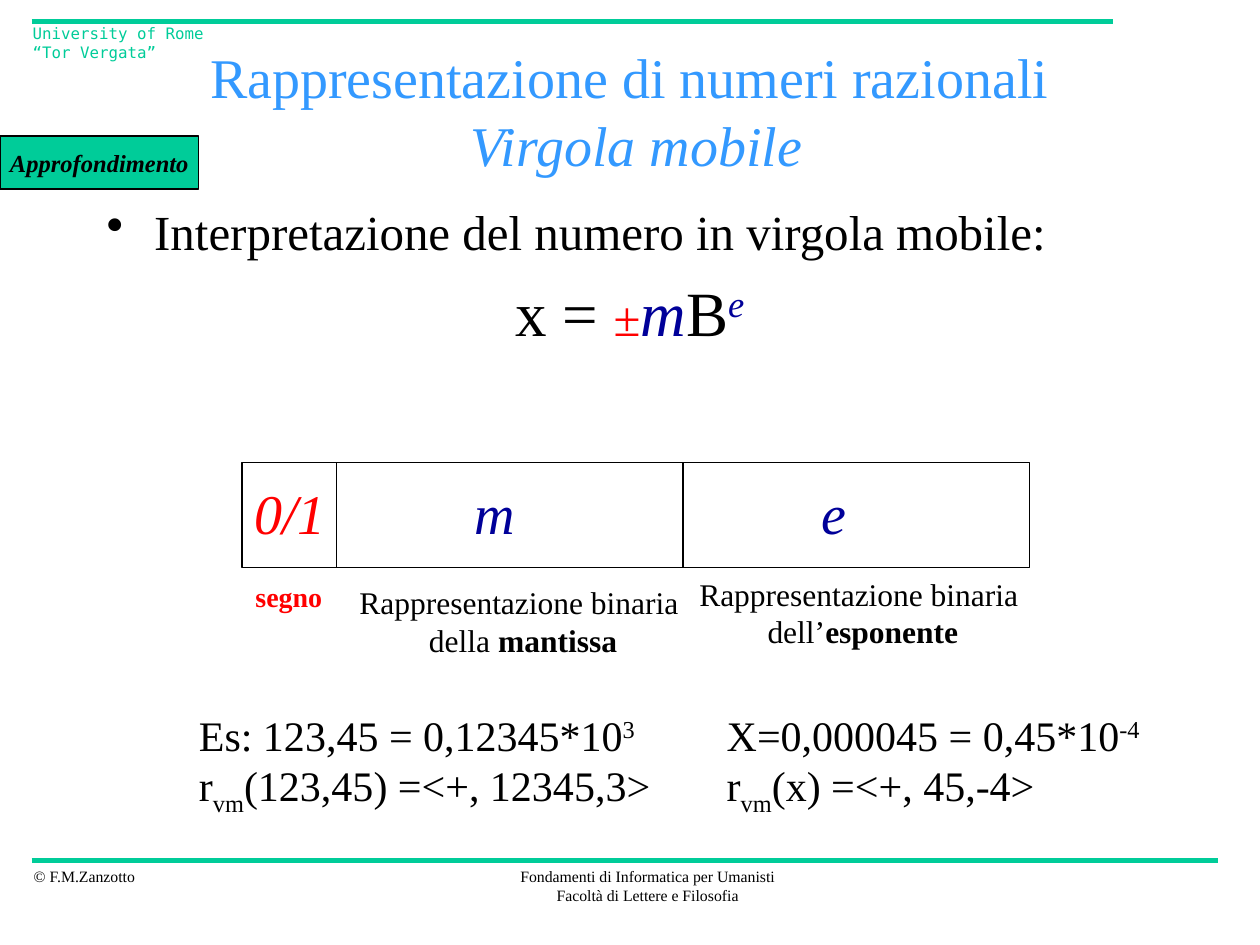
"""Build the slide on floating-point representation of rational numbers."""
from dataclasses import dataclass

from lxml import etree
from pptx import Presentation
from pptx import util as u
from pptx.dml.color import RGBColor
from pptx.enum import shapes, text
from pptx.oxml.ns import qn

HUES = {"green": "00CC99", "sky": "3399FF", "navy": "000099",
        "red": "FF0000", "black": "000000"}
SERIF, MONO = "Times New Roman", "DejaVu Sans Mono"
MID = text.PP_ALIGN.CENTER
NORM = {"size": 18, "hue": "black", "bold": False, "slant": False,
        "font": SERIF, "base": 0}


@dataclass
class Box:
    """Place of an object in centimetres."""
    left: float
    top: float
    width: float
    height: float

    def place(self) -> tuple:
        """Give the four lengths that python-pptx expects."""
        return tuple(u.Cm(n) for n in (self.left, self.top, self.width, self.height))


@dataclass
class Field:
    """One part of the stored number."""
    width: float
    sign: str
    hue: str
    glyph: Box


@dataclass
class Note:
    """Words under a field or in an example."""
    box: Box
    lines: list
    look: dict


def color(name: str) -> RGBColor:
    """Look up a named colour."""
    return RGBColor.from_string(HUES[name])


def write(frame, lines: list, align=None, gap: float = 0, **look) -> None:
    """Fill a frame; a line is a string or a list of strings and (string, format) pairs."""
    for i, line in enumerate(lines):
        para = frame.paragraphs[0] if i == 0 else frame.add_paragraph()
        para.alignment = align
        if i and gap:
            para.space_before = u.Pt(gap)
        for part in [line] if isinstance(line, str) else line:
            words, own = (part, {}) if isinstance(part, str) else part
            style = {**NORM, **look, **own}
            run = para.add_run()
            run.text = words
            font = run.font
            font.name, font.size = style["font"], u.Pt(style["size"])
            font.bold, font.italic = style["bold"], style["slant"]
            font.color.rgb = color(style["hue"])
            if style["base"]:
                run._r.get_or_add_rPr().set("baseline", str(style["base"] * 1000))


def label(slide, box: Box, lines: list, wrap: bool = False, **look):
    """Add a text box and return its frame."""
    frame = slide.shapes.add_textbox(*box.place()).text_frame
    frame.word_wrap = wrap
    if not wrap:
        frame.auto_size = text.MSO_AUTO_SIZE.SHAPE_TO_FIT_TEXT
    write(frame, lines, **look)
    return frame


def rule(slide, x1: float, y1: float, x2: float, y2: float, hue: str, width: float) -> None:
    """Draw a straight line without shadow."""
    line = slide.shapes.add_connector(
        shapes.MSO_CONNECTOR.STRAIGHT, *(u.Cm(n) for n in (x1, y1, x2, y2)))
    line.line.color.rgb = color(hue)
    line.line.width = u.Pt(width)
    etree.SubElement(line._element.spPr, qn("a:effectLst"))


def block(slide, box: Box, fill: str = ""):
    """Draw a rectangle with a thin black outline."""
    rect = slide.shapes.add_shape(shapes.MSO_SHAPE.RECTANGLE, *box.place())
    rect.shadow.inherit = False
    if fill:
        rect.fill.solid()
        rect.fill.fore_color.rgb = color(fill)
    else:
        rect.fill.background()
    rect.line.color.rgb = color("black")
    rect.line.width = u.Pt(0.75)
    return rect


def bullet(para, indent: float) -> None:
    """Give a paragraph a hanging bullet."""
    props = para._p.get_or_add_pPr()
    props.set("marL", str(u.Cm(indent)))
    props.set("indent", str(-u.Cm(indent)))
    etree.SubElement(props, qn("a:buChar")).set("char", "•")


def frame_page(slide) -> None:
    """Draw the rules, the header and the footer."""
    rule(slide, 0.64, 17.35, 24.56, 17.35, "green", 3)
    rule(slide, 0.64, 0.43, 22.43, 0.43, "green", 3)
    label(slide, Box(0.43, 17.35, 2.59, 0.64), ["© F.M.Zanzotto"], size=9)
    label(slide, Box(10.21, 17.35, 5.69, 1.02),
          ["Fondamenti di Informatica per Umanisti", "Facoltà di Lettere e Filosofia"],
          align=MID, size=9)
    label(slide, Box(0.41, 0.36, 4.34, 1.02), ["University of Rome", "“Tor Vergata”"],
          size=9, font=MONO, hue="green")


def draw_word(slide) -> None:
    """Draw the stored number as sign, mantissa and exponent."""
    left, top, high = 4.88, 9.32, 2.12
    fields = [Field(1.9, "0/1", "red", Box(4.88, 9.52, 1.96, 1.6)),
              Field(6.99, "m", "navy", Box(9.32, 9.52, 1.32, 1.6)),
              Field(6.99, "e", "navy", Box(16.31, 9.52, 1.02, 1.6))]
    block(slide, Box(left, top, sum(f.width for f in fields), high))
    edge = left
    for i, field in enumerate(fields):
        if i:
            rule(slide, edge, top, edge, top + high, "black", 0.75)
        label(slide, field.glyph, [field.sign], size=32, slant=True, hue=field.hue)
        edge += field.width


def sample(value: str, power: str, name: str, code: str) -> list:
    """Give the two lines of an example."""
    return [[value, (power, {"base": 30})],
            ["r", ("vm", {"base": -25}), f"({name}) =<{code}>"]]


def main() -> None:
    """Build and save the slide."""
    deck = Presentation()
    deck.slide_width, deck.slide_height = u.Cm(25.4), u.Cm(19.05)
    slide = deck.slides.add_slide(deck.slide_layouts[6])
    frame_page(slide)

    title = label(slide, Box(1.9, 1.27, 21.59, 1.9),
                  ["Rappresentazione di numeri razionali",
                   [" ", ("Virgola mobile", {"slant": True})]],
                  wrap=True, align=MID, size=32, hue="sky")
    title.vertical_anchor = text.MSO_ANCHOR.MIDDLE

    navy = {"hue": "navy", "slant": True}
    body = label(slide, Box(1.9, 3.94, 21.59, 13),
                 ["Interpretazione del numero in virgola mobile:",
                  ["x = ", ("±", {"size": 28, "hue": "red"}), ("m", navy), "B",
                   ("e", {**navy, "base": 30})]],
                 wrap=True, gap=7.2, size=36)
    lead, formula = body.paragraphs
    bullet(lead, 0.96)
    lead.runs[0].font.size = u.Pt(28)
    formula.alignment = MID

    draw_word(slide)
    bold, kind = {"bold": True}, "Rappresentazione binaria "
    notes = [
        Note(Box(4.9, 11.56, 1.85, 0.94), ["segno"],
             {"size": 16, "hue": "red", "bold": True}),
        Note(Box(6.99, 11.63, 7.11, 1.78), [kind, ["della ", ("mantissa", bold)]],
             {"align": MID}),
        Note(Box(13.84, 11.46, 7.11, 1.78), [kind, ["dell’", ("esponente", bold)]],
             {"align": MID}),
        Note(Box(3.76, 14.17, 9.7, 2.29),
             sample("Es: 123,45 = 0,12345*10", "3", "123,45", "+, 12345,3"), {"size": 24}),
        Note(Box(14.4, 14.17, 8.89, 2.29),
             sample("X=0,000045 = 0,45*10", "-4", "x", "+, 45,-4"), {"size": 24}),
    ]
    for note in notes:
        label(slide, note.box, note.lines, **note.look)

    badge = block(slide, Box(0, 2.74, 4.01, 1.07), "green").text_frame
    badge.word_wrap = False
    badge.vertical_anchor = text.MSO_ANCHOR.MIDDLE
    write(badge, ["Approfondimento"], align=MID, size=14, bold=True, slant=True)
    deck.save("out.pptx")


if __name__ == "__main__":
    main()
